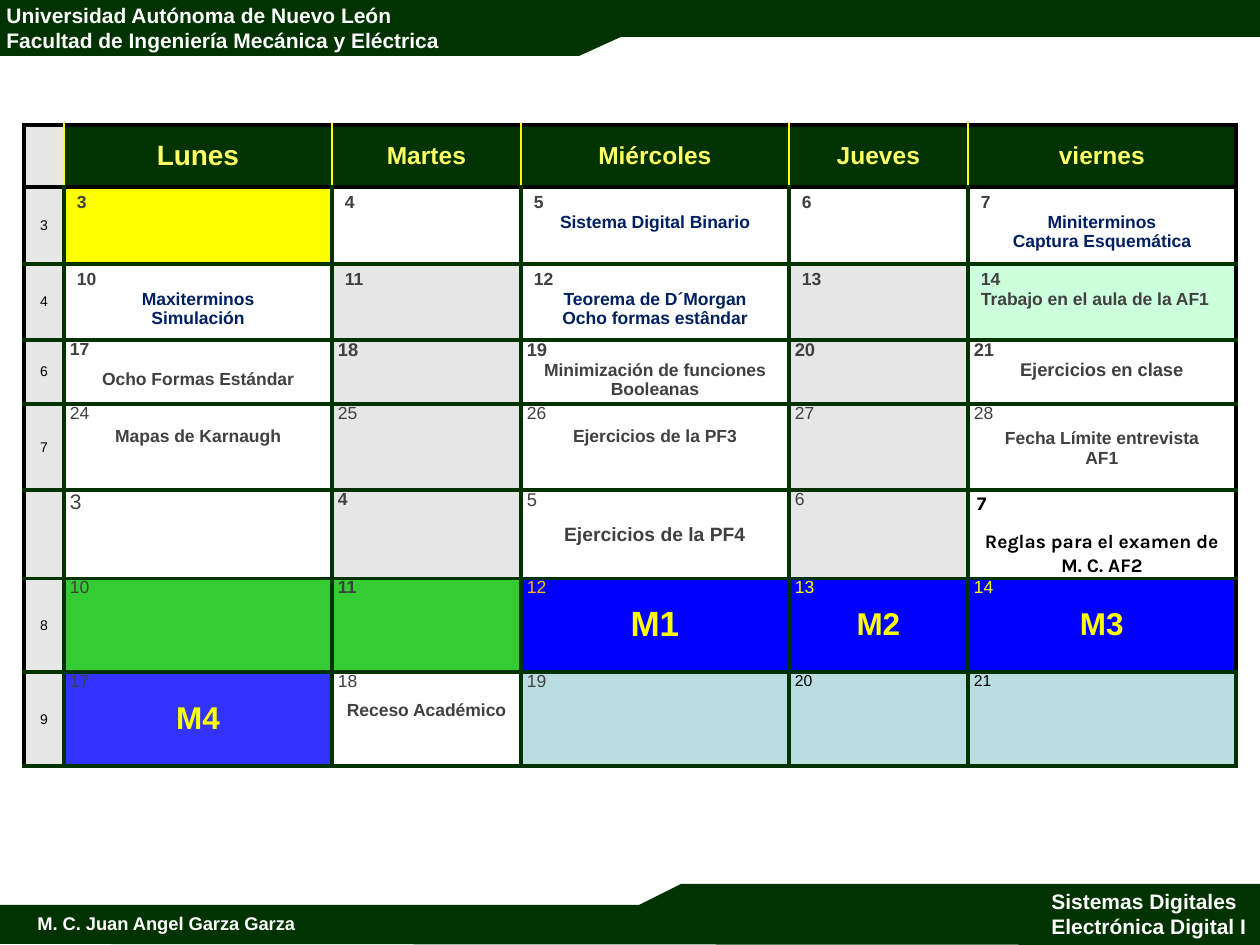
from lxml import etree
from pptx import Presentation, util as u
from pptx.dml import color as dml
from pptx.enum import text as t
from pptx.oxml import ns

PX = 914400 // 126
GREEN, BLACK, WHITE, GRAY, YELLOW = "003300", "000000", "FFFFFF", "E6E6E6", "FFFF00"
INK, NAVY, BLUE, LIME, TEAL = "404040", "002060", "0000FF", "33CC33", "BADDE1"
LEFT, CENTER = t.PP_ALIGN.LEFT, t.PP_ALIGN.CENTER


def rgb(value):
    """Return the colour for a hex string."""
    return dml.RGBColor.from_string(value)


def line(words, size=10, bold=True, color=INK, align=LEFT, before=0, after=0, spacing=None, font="Arial"):
    """Describe one paragraph."""
    form = dict(alignment=align, space_before=u.Pt(before), space_after=u.Pt(after))
    if spacing:
        form["line_spacing"] = spacing
    return words, form, dict(size=u.Pt(size), bold=bold, name=font), color


def event(words, **style):
    """Describe a centred activity."""
    return line(words, align=CENTER, **style)


def module(words, size=18):
    """Describe a large exam module label."""
    return event(words, size=size, color=YELLOW, before=2)


def plain(words, **style):
    """Describe a day number in regular weight."""
    return line(words, bold=False, **style)


class Deck:
    """Hold the presentation, its style and the current slide."""

    def __init__(self, width, height):
        """Open a deck with one blank slide."""
        self.prs = Presentation()
        self.prs.slide_width, self.prs.slide_height = width * PX, height * PX
        self.slide = self.prs.slides.add_slide(self.prs.slide_layouts[6])

    def fill_text(self, frame, lines):
        """Fill a text frame with paragraphs."""
        for i, (words, form, font, color) in enumerate(lines):
            paragraph = frame.paragraphs[0] if i == 0 else frame.add_paragraph()
            run = paragraph.add_run()
            run.text = words
            for target, values in ((paragraph, form), (run.font, font)):
                for name, value in values.items():
                    setattr(target, name, value)
            run.font.color.rgb = rgb(color)

    def label(self, box, lines):
        """Add a text box that does not wrap."""
        frame = self.slide.shapes.add_textbox(*(n * PX for n in box)).text_frame
        frame.word_wrap = False
        self.fill_text(frame, lines)

    def band(self, points):
        """Add a filled green outline."""
        builder = self.slide.shapes.build_freeform(*points[0], scale=PX)
        builder.add_line_segments(points[1:], close=True)
        shape = builder.convert_to_shape()
        shape.shadow.inherit = False
        shape.fill.solid()
        shape.fill.fore_color.rgb = rgb(GREEN)
        shape.line.fill.background()

    def border(self, cell, sides):
        """Draw the four borders of a cell."""
        props = cell._tc.get_or_add_tcPr()
        for i, (side, (color, width)) in enumerate(sides.items()):
            edge = etree.Element(ns.qn("a:ln" + side), w=str(u.Pt(width)))
            fill = etree.SubElement(edge, ns.qn("a:solidFill"))
            etree.SubElement(fill, ns.qn("a:srgbClr"), val=color)
            props.insert(i, edge)

    def calendar(self, left, top, widths, heights, weeks):
        """Add the calendar table."""
        box = (left, top, sum(widths), sum(heights))
        table = self.slide.shapes.add_table(len(heights), len(widths), *(n * PX for n in box)).table
        for column, width in zip(table.columns, widths):
            column.width = width * PX
        for row, height in zip(table.rows, heights):
            row.height = height * PX
        for r, days in enumerate(weeks):
            for c, (fill, *lines) in enumerate(days):
                self.fill_cell(table.cell(r, c), r, c, fill, lines)

    def fill_cell(self, cell, r, c, fill, lines):
        """Format one calendar cell by its place."""
        cell.fill.solid()
        cell.fill.fore_color.rgb = rgb(fill)
        karla = any(font["name"] == "Karla" for _, _, font, _ in lines)
        across, down = (13, 6) if r < 3 else (9 if karla else 6, 0)
        middle = r == 0 or c == 0 or karla
        for name, value in dict(
            margin_left=across * PX, margin_right=across * PX,
            margin_top=down * PX, margin_bottom=down * PX,
            vertical_anchor=t.MSO_ANCHOR.MIDDLE if middle else t.MSO_ANCHOR.TOP,
        ).items():
            setattr(cell, name, value)
        self.fill_text(cell.text_frame, lines)
        outer, inner = (BLACK, 3), (GREEN, 2.25)
        upright = (YELLOW, 1) if r == 0 else inner
        self.border(cell, {
            "L": outer if c == 0 else upright,
            "R": outer if c == 5 and r < 7 else upright,
            "T": outer if r < 2 else inner,
            "B": outer if r == 0 else inner,
        })


def week(number, *days):
    """Put the week number cell before its days."""
    return [(GRAY, *([event(number, size=8, bold=False, color=BLACK)] if number else [])), *days]


def main():
    """Build the class calendar."""
    deck = Deck(1260, 945)
    deck.band([(-1, 56), (-2, -4), (1260, -3), (1260, 37), (621, 37), (579, 56)])
    deck.band([(1261, 884), (1262, 945), (0, 944), (0, 905), (639, 905), (681, 884)])
    deck.label((-6, -4, 459, 63), [
        line("Universidad Autónoma de Nuevo León", size=12, color=WHITE),
        line("Facultad de Ingeniería Mecánica y Eléctrica", size=12, color=WHITE),
    ])
    deck.label((1039, 882, 221, 63), [
        line("Sistemas Digitales", size=12, color=WHITE),
        line("Electrónica Digital I", size=12, color=WHITE),
    ])
    deck.label((25, 906, 289, 35), [line("M. C. Juan Angel Garza Garza", size=10.5, color=WHITE)])

    names = ["Lunes", "Martes", "Miércoles", "Jueves", "viernes"]
    heading = [(GREEN, event(name, size=16 if name == "Lunes" else 14, color="FFFF66")) for name in names]
    rule = dict(size=11, color=BLACK, spacing=1.07, font="Karla")
    weeks = [
        week("", *heading),
        week("3",
             (YELLOW, line("3")),
             (WHITE, line("4")),
             (WHITE, line("5"), event("Sistema Digital Binario", color=NAVY)),
             (WHITE, line("6")),
             (WHITE, line("7"), event("Miniterminos", color=NAVY), event("Captura Esquemática", color=NAVY))),
        week("4",
             (WHITE, line("10"), event("Maxiterminos", color=NAVY), event("Simulación", color=NAVY)),
             (GRAY, line("11")),
             (WHITE, line("12"), event("Teorema de D´Morgan", color=NAVY),
              event("Ocho formas estândar", color=NAVY)),
             (GRAY, line("13")),
             ("CCFFDC", line("14"), line("Trabajo en el aula de la AF1"))),
        week("6",
             (WHITE, line("17", after=6), event("Ocho Formas Estándar")),
             (GRAY, line("18", size=10.5)),
             (WHITE, line("19", size=10.5), event("Minimización de funciones Booleanas")),
             (GRAY, line("20", size=10.5)),
             (WHITE, line("21", size=10.5), event("Ejercicios en clase", size=10.5))),
        week("7",
             (WHITE, plain("24"), event("Mapas de Karnaugh", before=2)),
             (GRAY, plain("25")),
             (WHITE, plain("26", after=2), event("Ejercicios de la PF3")),
             (GRAY, plain("27")),
             (WHITE, plain("28", after=3), event("Fecha Límite entrevista"), event("AF1"))),
        week("",
             (WHITE, plain("3", size=12)),
             (GRAY, line("4")),
             (WHITE, plain("5", size=10.5, after=6), event("Ejercicios de la PF4", size=11, before=2)),
             (GRAY, plain("6")),
             (WHITE, line("7", after=8, **rule), event("Reglas para el examen de M. C. AF2", **rule))),
        week("8",
             (LIME, plain("10")),
             (LIME, line("11")),
             (BLUE, plain("12", color="FFC000", after=2), module("M1", size=20)),
             (BLUE, plain("13", color=YELLOW, after=3), module("M2")),
             (BLUE, plain("14", color=YELLOW, after=3), module("M3"))),
        week("9",
             ("3333FF", plain("17", after=3), module("M4")),
             (WHITE, plain("18", after=3), event("Receso Académico", before=2)),
             (TEAL, plain("19")),
             (TEAL, plain("20", size=9, color=BLACK)),
             (TEAL, plain("21", size=9, color=BLACK))),
    ]
    deck.calendar(24, 125, [40, 268, 189, 268, 179, 268], [62, 77, 76, 64, 86, 88, 94, 94], weeks)
    deck.prs.save("out.pptx")


if __name__ == "__main__":
    main()
